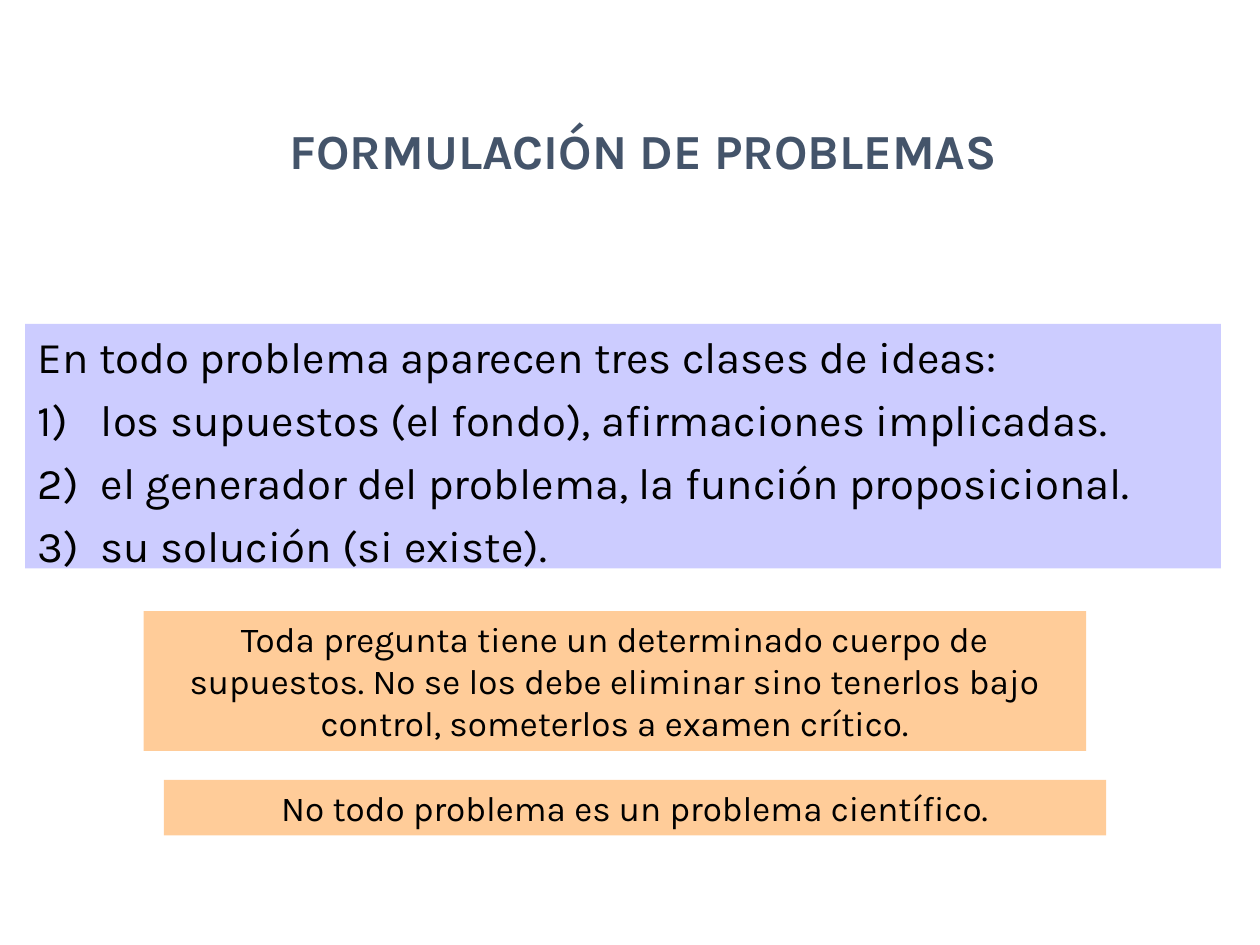
from lxml import etree
from pptx import Presentation
from pptx import util as u
from pptx.dml import color
from pptx.enum import shapes, text
from pptx.oxml import ns


def paint(target, value):
    target.fill.solid()
    target.fill.fore_color.rgb = color.RGBColor.from_string(value)


def write(shape, box, lines, size, align, ink="000000", bold=False, after=0):
    shape.left, shape.top, shape.width, shape.height = [u.Inches(n) for n in box]
    frame = shape.text_frame
    frame.word_wrap = True
    frame.auto_size = text.MSO_AUTO_SIZE.SHAPE_TO_FIT_TEXT
    frame.vertical_anchor = text.MSO_ANCHOR.TOP
    for index, line in enumerate(lines):
        paragraph = frame.add_paragraph() if index else frame.paragraphs[0]
        paragraph.alignment = align
        paragraph.space_before = u.Pt(0)
        paragraph.space_after = u.Pt(after)
        run = paragraph.add_run()
        run.text = line
        run.font.name = "Karla"
        run.font.size = u.Pt(size)
        run.font.bold = bold
        paint(run.font, ink)


presentation = Presentation()
presentation.slide_width = u.Inches(10)
presentation.slide_height = u.Inches(7.5)
slide = presentation.slides.add_slide(presentation.slide_layouts[1])

ideas = slide.placeholders[1]
paint(ideas, "CCCCFF")
write(ideas, (0.2, 2.57, 9.49, 2.04), [
    "En todo problema aparecen tres clases de ideas:",
    "los supuestos (el fondo), afirmaciones implicadas.",
    "el generador del problema, la función proposicional.",
    "su solución (si existe).",
], 25, text.PP_ALIGN.JUSTIFY, after=6)
for index, paragraph in enumerate(ideas.text_frame.paragraphs):
    properties = paragraph._p.get_or_add_pPr()
    indent = u.Inches(0.5) if index else 0
    properties.set("marL", str(indent))
    properties.set("indent", str(-indent))
    if index:
        etree.SubElement(properties, ns.qn("a:buFont"), typeface="+mj-lt")
        etree.SubElement(properties, ns.qn("a:buAutoNum"), type="arabicParenR")
    else:
        etree.SubElement(properties, ns.qn("a:buNone"))

write(slide.shapes.title, (1.77, 0.91, 6.67, 0.57), ["FORMULACIÓN DE PROBLEMAS"],
      28, text.PP_ALIGN.CENTER, ink="44546A", bold=True)

notes = [
    ((1.14, 4.85, 7.48, 1.11),
     "Toda pregunta tiene un determinado cuerpo de supuestos. No se los debe "
     "eliminar sino tenerlos bajo control, someterlos a examen crítico."),
    ((1.3, 6.19, 7.48, 0.44), "No todo problema es un problema científico."),
]
for box, line in notes:
    note = slide.shapes.add_shape(shapes.MSO_SHAPE.RECTANGLE, 0, 0, 0, 0)
    note.shadow.inherit = False
    note.line.fill.background()
    paint(note, "FFCC99")
    write(note, box, [line], 20, text.PP_ALIGN.CENTER)

presentation.save("out.pptx")
